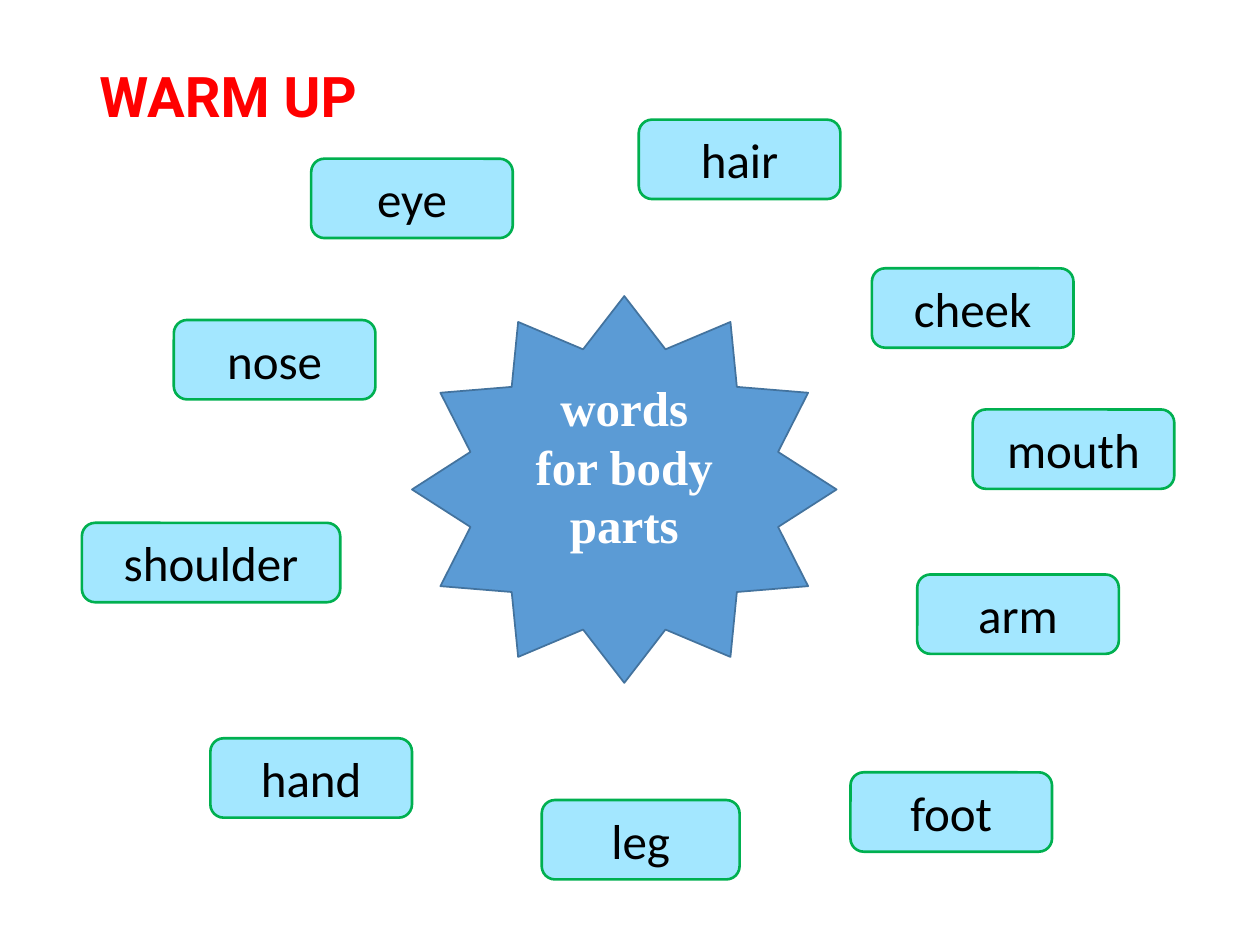
from pptx import Presentation
from pptx.dml.color import RGBColor
from pptx.enum.shapes import MSO_SHAPE as Shape
from pptx.enum.text import MSO_ANCHOR as Anchor, MSO_AUTO_SIZE as Fit, PP_ALIGN as Align
from pptx.util import Inches, Pt

COLUMNS, ROWS = 100, 75
BOX_COLUMNS, BOX_ROWS = 16, 6.3

# word: left column, top row
WORDS = {
    "cheek": (69.2, 21.3),
    "arm": (72.8, 45.6),
    "nose": (13.8, 25.4),
    "eye": (24.7, 12.6),
    "leg": (43, 63.5),
    "shoulder": (6.5, 41.5),
    "hand": (16.7, 58.6),
    "hair": (50.7, 9.5),
    "mouth": (77.2, 32.5),
    "foot": (67.5, 61.3),
}
WIDTHS = {"leg": 15.7, "shoulder": 20.5}


def color(value):
    return RGBColor.from_string(value)


class WordMap:
    """Holds the style and draws on one slide, placed by grid columns and rows."""

    title_font, word_font, hub_font = "Roboto", "Calibri", "Times New Roman"
    title_color, word_color, hub_color = "FF0000", "000000", "FFFFFF"
    box_fill, box_line = "A3E7FF", "00B050"
    hub_fill, hub_line = "5B9BD5", "43739E"

    def __init__(self, prs):
        self.slide = prs.slides.add_slide(prs.slide_layouts[6])
        self.column = prs.slide_width / COLUMNS
        self.row = prs.slide_height / ROWS

    def place(self, left, top, width, height):
        return [round(n * unit) for n, unit in
                zip((left, top, width, height), (self.column, self.row) * 2)]

    def add_text(self, sp, text, size, font, fill, anchor, align=Align.CENTER, bold=False):
        tf = sp.text_frame
        tf.word_wrap = True
        tf.vertical_anchor = anchor
        p = tf.paragraphs[0]
        p.alignment = align
        r = p.add_run()
        r.text = text
        r.font.name, r.font.size, r.font.bold = font, Pt(size), bold
        r.font.color.rgb = color(fill)
        return tf

    def shape(self, kind, area, fill, line, weight):
        sp = self.slide.shapes.add_shape(kind, *self.place(*area))
        sp.shadow.inherit = False
        sp.fill.solid()
        sp.fill.fore_color.rgb = color(fill)
        sp.line.color.rgb = color(line)
        sp.line.width = Pt(weight)
        return sp

    def title(self, text, *area):
        sp = self.slide.shapes.add_textbox(*self.place(*area))
        tf = self.add_text(sp, text, 32, self.title_font, self.title_color,
                           Anchor.MIDDLE, Align.LEFT, bold=True)
        tf.paragraphs[0].line_spacing = 0.9

    def word(self, text, left, top, width=BOX_COLUMNS):
        sp = self.shape(Shape.ROUNDED_RECTANGLE, (left, top, width, BOX_ROWS),
                        self.box_fill, self.box_line, 1.5)
        tf = self.add_text(sp, text, 28, self.word_font, self.word_color, Anchor.TOP)
        tf.auto_size = Fit.SHAPE_TO_FIT_TEXT

    def hub(self, text, *area):
        sp = self.shape(Shape.STAR_12_POINT, area, self.hub_fill, self.hub_line, 1)
        tf = self.add_text(sp, text, 28, self.hub_font, self.hub_color,
                           Anchor.MIDDLE, bold=True)
        tf.margin_bottom = Inches(0.43)  # lifts the words above the middle


def main():
    prs = Presentation()
    prs.slide_width, prs.slide_height = Inches(10), Inches(7.5)
    word_map = WordMap(prs)
    word_map.title("WARM UP", 6.9, 4, 29.2, 7.8)
    for text, (left, top) in WORDS.items():
        word_map.word(text, left, top, WIDTHS.get(text, BOX_COLUMNS))
    word_map.hub("words for body parts", 32.7, 23.5, 33.7, 30.7)
    prs.save("out.pptx")


if __name__ == "__main__":
    main()
